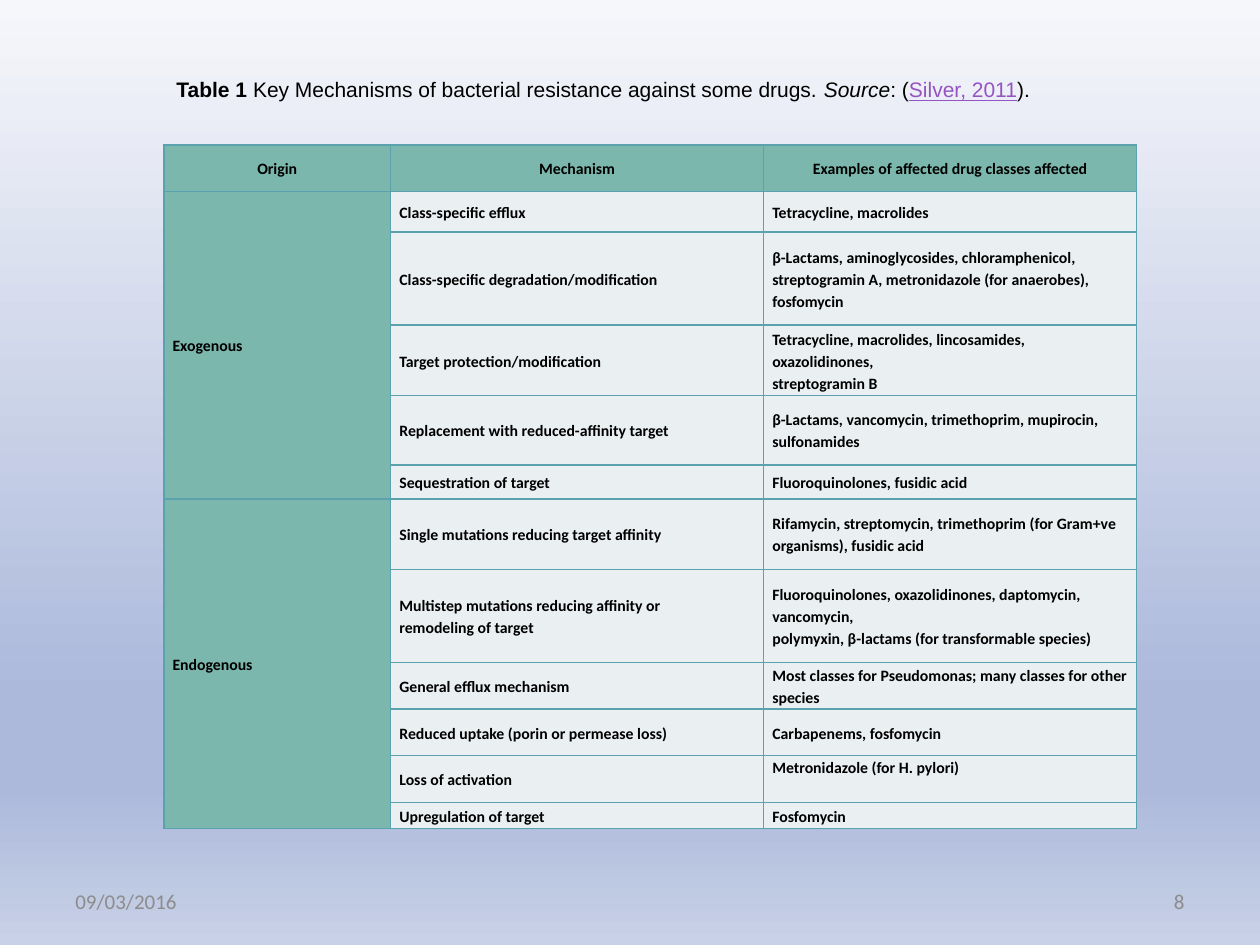
from lxml.etree import SubElement
from pptx import Presentation
from pptx.dml.color import RGBColor
from pptx.enum.text import MSO_ANCHOR, PP_ALIGN
from pptx.oxml.ns import qn
from pptx.util import Inches, Pt

BLACK = RGBColor(0x00, 0x00, 0x00)
GREY = RGBColor(0x8C, 0x8C, 0x8C)
LINK = RGBColor(0x94, 0x54, 0xC3)
GREEN = RGBColor(0x7B, 0xB7, 0xAC)
PALE = RGBColor(0xEA, 0xF0, 0xF2)
BORDER = RGBColor(0x5A, 0xA2, 0xAE)
BACKGROUND = [(0, RGBColor(0xF6, 0xF7, 0xFB)), (74, RGBColor(0xAC, 0xB9, 0xDB)),
              (83, RGBColor(0xAC, 0xB9, 0xDB)), (100, RGBColor(0xC8, 0xD1, 0xE7))]

CAPTION = [
    ("Table 1 ", {"bold": True}),
    ("Key Mechanisms of bacterial resistance against some drugs. ", {}),
    ("Source", {"italic": True}),
    (": (", {}),
    ("Silver, 2011", {"color": LINK, "underline": True}),
    (").", {}),
]
HEADINGS = ["Origin", "Mechanism", "Examples of affected drug classes affected"]
HEADING_HEIGHT = 0.37
# Origin -> rows of (height, mechanism, examples); a line break starts a paragraph
ORIGINS = {
    "Exogenous": [
        (0.32, "Class-specific efflux", "Tetracycline, macrolides"),
        (0.74, "Class-specific degradation/modification",
         "β-Lactams, aminoglycosides, chloramphenicol, streptogramin A, "
         "metronidazole (for anaerobes), fosfomycin"),
        (0.56, "Target protection/modification",
         "Tetracycline, macrolides, lincosamides, oxazolidinones,\nstreptogramin B"),
        (0.55, "Replacement with reduced-affinity target",
         "β-Lactams, vancomycin, trimethoprim, mupirocin, sulfonamides"),
        (0.27, "Sequestration of target", "Fluoroquinolones, fusidic acid"),
    ],
    "Endogenous": [
        (0.56, "Single mutations reducing target affinity",
         "Rifamycin, streptomycin, trimethoprim (for Gram+ve\norganisms), fusidic acid"),
        (0.74, "Multistep mutations reducing affinity or\nremodeling of target",
         "Fluoroquinolones, oxazolidinones, daptomycin, vancomycin,\n"
         "polymyxin, β-lactams (for transformable species)"),
        (0.37, "General efflux mechanism",
         "Most classes for Pseudomonas; many classes for other species"),
        (0.37, "Reduced uptake (porin or permease loss)", "Carbapenems, fosfomycin"),
        (0.37, "Loss of activation", "Metronidazole (for H. pylori)"),
        (0.21, "Upregulation of target", "Fosfomycin"),
    ],
}
TOP_ALIGNED = "Metronidazole (for H. pylori)"
COLUMN_WIDTHS = [1.8, 2.96, 2.96]
TABLE_LEFT, TABLE_TOP = 1.3, 1.15
FOOTERS = [("09/03/2016", 0.5, PP_ALIGN.LEFT), ("8", 7.17, PP_ALIGN.RIGHT)]


def add_span(para, text, font="Calibri", size=9, color=BLACK, bold=False,
             italic=False, underline=False):
    span = para.add_run()
    span.text = text
    span.font.name, span.font.size = font, Pt(size)
    span.font.color.rgb = color
    span.font.bold, span.font.italic, span.font.underline = bold, italic, underline


def add_solid(parent, color):
    fill = SubElement(parent, qn("a:solidFill"))
    SubElement(fill, qn("a:srgbClr"), val=str(color))


def paint_background(page):
    fill = page.background.fill
    fill.gradient()
    fill.gradient_angle = 270
    stops = page._element.find(".//" + qn("a:gsLst"))
    for stop in list(stops):
        stops.remove(stop)
    for share, color in BACKGROUND:
        stop = SubElement(stops, qn("a:gs"), pos=str(share * 1000))
        SubElement(stop, qn("a:srgbClr"), val=str(color))


def style_cell(cell, color):
    """Set margins, borders and fill; borders must precede the fill in the XML."""
    cell.margin_left = cell.margin_right = Inches(0.07)
    cell.margin_top = cell.margin_bottom = 0
    cell.vertical_anchor = MSO_ANCHOR.MIDDLE
    properties = cell._tc.get_or_add_tcPr()
    for side in ("a:lnL", "a:lnR", "a:lnT", "a:lnB"):
        add_solid(SubElement(properties, qn(side), w=str(Pt(1))), BORDER)
    cell.fill.solid()
    cell.fill.fore_color.rgb = color


def write_cell(cell, text, align=PP_ALIGN.LEFT):
    frame = cell.text_frame
    for number, line in enumerate(text.split("\n")):
        para = frame.add_paragraph() if number else frame.paragraphs[0]
        para.alignment, para.line_spacing = align, 1.15
        add_span(para, line, bold=True)
    if text == TOP_ALIGNED:
        cell.vertical_anchor = MSO_ANCHOR.TOP


def add_mechanism_table(page):
    rows = [row for group in ORIGINS.values() for row in group]
    heights = [HEADING_HEIGHT] + [row[0] for row in rows]
    table = page.shapes.add_table(
        len(heights), len(COLUMN_WIDTHS), Inches(TABLE_LEFT), Inches(TABLE_TOP),
        Inches(sum(COLUMN_WIDTHS)), Inches(sum(heights))).table
    for column, width in zip(table.columns, COLUMN_WIDTHS):
        column.width = Inches(width)
    for row_number, height in enumerate(heights):
        table.rows[row_number].height = Inches(height)
        for column_number in range(len(COLUMN_WIDTHS)):
            is_label = row_number == 0 or column_number == 0
            style_cell(table.cell(row_number, column_number), GREEN if is_label else PALE)
    for column_number, heading in enumerate(HEADINGS):
        write_cell(table.cell(0, column_number), heading, PP_ALIGN.CENTER)
    first = 1
    for origin, group in ORIGINS.items():
        table.cell(first, 0).merge(table.cell(first + len(group) - 1, 0))
        write_cell(table.cell(first, 0), origin)
        for row_number, (_, mechanism, examples) in enumerate(group, first):
            write_cell(table.cell(row_number, 1), mechanism)
            write_cell(table.cell(row_number, 2), examples)
        first += len(group)


def add_caption(page):
    title = page.shapes.title
    title.left, title.top = Inches(1.3), Inches(0.36)
    title.width, title.height = Inches(7.52), Inches(0.61)
    title.text_frame.vertical_anchor = MSO_ANCHOR.TOP
    para = title.text_frame.paragraphs[0]
    para.alignment, para.line_spacing = PP_ALIGN.JUSTIFY, 2.0
    para.space_before = para.space_after = Pt(6)
    for text, style in CAPTION:
        add_span(para, text, font="Arial", size=12, **style)


def add_footer(page, text, left, align):
    box = page.shapes.add_textbox(Inches(left), Inches(6.95), Inches(2.33), Inches(0.4))
    box.text_frame.word_wrap = True
    box.text_frame.vertical_anchor = MSO_ANCHOR.MIDDLE
    para = box.text_frame.paragraphs[0]
    para.alignment = align
    add_span(para, text, size=12, color=GREY)


def main():
    deck = Presentation()
    deck.slide_width, deck.slide_height = Inches(10), Inches(7.5)
    page = deck.slides.add_slide(deck.slide_layouts.get_by_name("Title Only"))
    paint_background(page)
    add_caption(page)
    add_mechanism_table(page)
    for text, left, align in FOOTERS:
        add_footer(page, text, left, align)
    deck.save("out.pptx")


if __name__ == "__main__":
    main()
